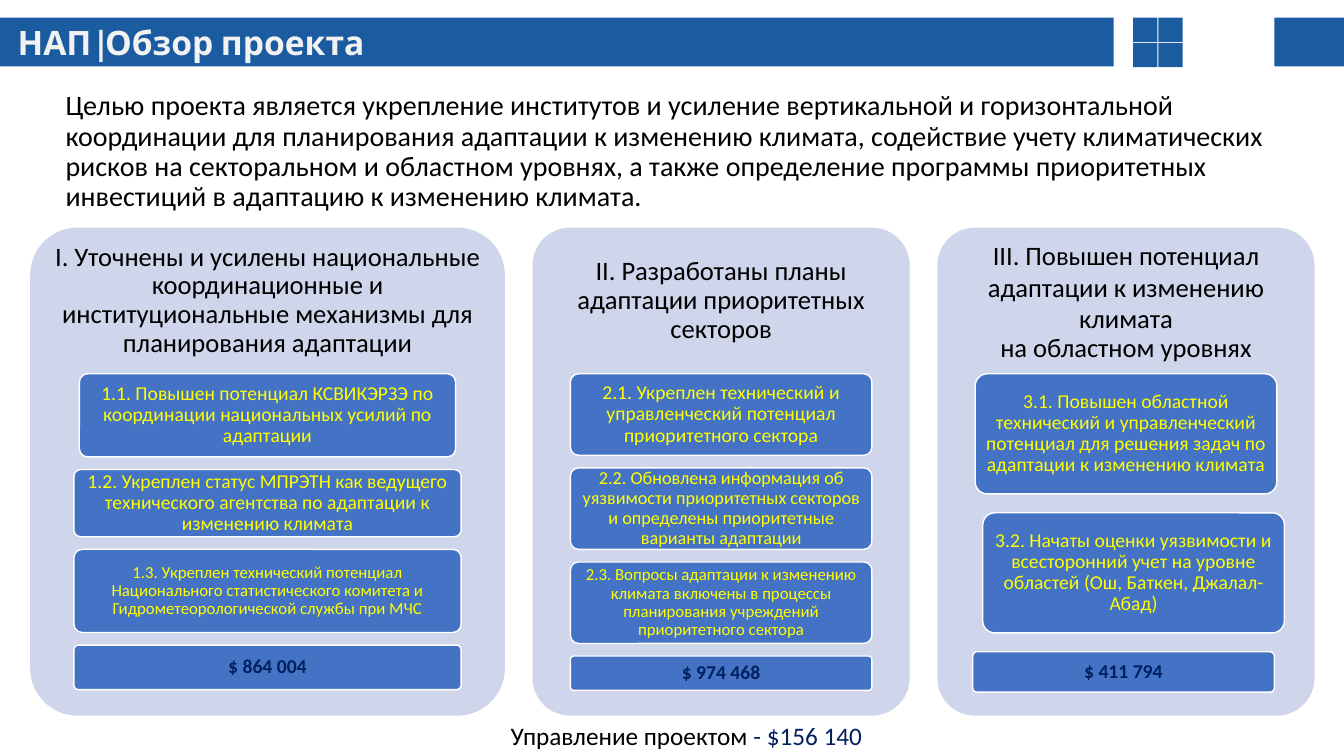
from dataclasses import dataclass

from pptx import Presentation
from pptx.dml.color import RGBColor
from pptx.enum.shapes import MSO_SHAPE
from pptx.enum.text import MSO_ANCHOR, MSO_AUTO_SIZE, PP_ALIGN
from pptx.util import Emu, Inches, Pt

RECT, ROUND = MSO_SHAPE.RECTANGLE, MSO_SHAPE.ROUNDED_RECTANGLE
LEFT, CENTER = PP_ALIGN.LEFT, PP_ALIGN.CENTER
MIDDLE, TOP = MSO_ANCHOR.MIDDLE, MSO_ANCHOR.TOP
TITLE_ONLY = 5

BRAND = RGBColor(0x1B, 0x5B, 0xA0)
PANEL_FILL = RGBColor(0xCF, 0xD5, 0xEA)
CARD_FILL = RGBColor(0x44, 0x72, 0xC4)
NAVY = RGBColor(0x00, 0x20, 0x60)
YELLOW = RGBColor(0xFF, 0xFF, 0x00)
BLACK = RGBColor(0x00, 0x00, 0x00)
WHITE = RGBColor(0xFF, 0xFF, 0xFF)
PALE = RGBColor(0xF2, 0xF2, 0xF2)

# The slide is a grid of square cells.
COLS, ROWS = 160, 90
WIDTH, HEIGHT = Inches(13.333), Inches(7.5)
PANEL_LEFT, PANEL_TOP, PANEL_ROWS, PANEL_GAP = 3.6, 27.1, 58.1, 3.3
HEADING_ROWS = 17.4
BAR_TOP, BAR_ROWS = 2.1, 5.8
TILE, TILE_STEP, TILES_LEFT = 2.9, 3, 134.9


@dataclass(frozen=True)
class Run:
    text: str
    size: float
    color: RGBColor = BLACK
    bold: bool = False
    font: str = "Calibri"


@dataclass(frozen=True)
class Para:
    runs: list[Run]
    align: PP_ALIGN = CENTER
    spacing: float = 0.9


@dataclass(frozen=True)
class Card:
    """One rounded card; shift moves it sideways from the panel's centre."""
    run: Run
    cols: float
    rows: float
    shift: float = 0


@dataclass(frozen=True)
class Panel:
    heading: list[Para]
    cols: float
    gap: float
    cards: list[Card]


def heading(text: str, spacing: float = 0.9) -> Para:
    return Para([Run(text, 19)], spacing=spacing)


def output(text: str, size: float = 14) -> Run:
    return Run(text, size, YELLOW)


def budget(text: str) -> Run:
    return Run(text, 14, NAVY, bold=True)


PANELS = [
    Panel([heading("I. Уточнены и усилены национальные координационные и "
                   "институциональные механизмы для планирования адаптации")], 56.5, 1.5, [
        Card(output("1.1. Повышен потенциал КСВИКЭРЗЭ по координации национальных "
                    "усилий по адаптации"), 44.8, 9.9),
        Card(output("1.2. Укреплен статус МПРЭТН как ведущего технического агентства "
                    "по адаптации к изменению климата"), 46.1, 8),
        Card(output("1.3. Укреплен технический потенциал Национального статистического "
                    "комитета и Гидрометеорологической службы при МЧС", 12), 46.1, 9.9),
        Card(budget("$ 864 004"), 46.1, 5.3),
    ]),
    Panel([heading("II. Разработаны планы адаптации приоритетных секторов")], 44.9, 1.5, [
        Card(output("2.1. Укреплен технический и управленческий потенциал "
                    "приоритетного сектора"), 35.9, 9.7),
        Card(output("2.2. Обновлена информация об уязвимости приоритетных секторов и "
                    "определены приоритетные варианты адаптации", 13), 35.9, 9.7),
        Card(output("2.3. Вопросы адаптации к изменению климата включены в процессы "
                    "планирования учреждений приоритетного сектора", 12), 35.9, 9.7),
        Card(budget("$ 974 468"), 35.9, 4.1),
    ]),
    Panel([heading("III. Повышен потенциал адаптации к изменению климата", 1.0),
           heading("на областном уровнях")], 44.9, 2.25, [
        Card(output("3.1. Повышен областной технический и управленческий потенциал для "
                    "решения задач по адаптации к изменению климата"), 35.9, 14.3),
        Card(output("3.2. Начаты оценки уязвимости и всесторонний учет на уровне "
                    "областей (Ош, Баткен, Джалал-Абад)"), 35.9, 14.3, shift=0.9),
        Card(budget("$ 411 794"), 35.9, 4.8, shift=-0.3),
    ]),
]
GOAL = ("Целью проекта является укрепление институтов и усиление вертикальной и "
        "горизонтальной координации для планирования адаптации к изменению климата, "
        "содействие учету климатических рисков на секторальном и областном уровнях, "
        "а также определение программы приоритетных инвестиций в адаптацию к "
        "изменению климата.")


def x(cols: float) -> Emu:
    return Emu(round(WIDTH * cols / COLS))


def y(rows: float) -> Emu:
    return Emu(round(HEIGHT * rows / ROWS))


def place(left: float, top: float, cols: float, rows: float) -> tuple[Emu, Emu, Emu, Emu]:
    return x(left), y(top), x(cols), y(rows)


def write(sp, paras: list[Para], inset: tuple[float, float] = (1.2, 0.6),
          anchor: MSO_ANCHOR = MIDDLE, wrap: bool = True) -> None:
    """Fill a shape with paragraphs; inset is side columns, then top and bottom rows."""
    tf = sp.text_frame
    side, end = x(inset[0]), y(inset[1])
    frame = dict(word_wrap=wrap, auto_size=MSO_AUTO_SIZE.NONE, vertical_anchor=anchor,
                 margin_left=side, margin_right=side, margin_top=end, margin_bottom=end)
    for name, value in frame.items():
        setattr(tf, name, value)
    for i, para in enumerate(paras):
        p = tf.add_paragraph() if i else tf.paragraphs[0]
        p.alignment, p.line_spacing = para.align, para.spacing
        for run in para.runs:
            r = p.add_run()
            r.text = run.text
            for name, value in dict(name=run.font, size=Pt(run.size), bold=run.bold).items():
                setattr(r.font, name, value)
            r.font.color.rgb = run.color


def add_block(s, kind: MSO_SHAPE, box: tuple[Emu, Emu, Emu, Emu], fill: RGBColor,
              line: RGBColor | None = None):
    sp = s.shapes.add_shape(kind, *box)
    sp.shadow.inherit = False
    sp.fill.solid()
    sp.fill.fore_color.rgb = fill
    if line is None:
        sp.line.fill.background()
    else:
        sp.line.color.rgb, sp.line.width = line, Pt(1)
    if kind == ROUND:
        sp.adjustments[0] = 0.1
    return sp


def draw_panel(s, panel: Panel, left: float) -> None:
    add_block(s, ROUND, place(left, PANEL_TOP, panel.cols, PANEL_ROWS), PANEL_FILL)
    box = s.shapes.add_textbox(*place(left, PANEL_TOP, panel.cols, HEADING_ROWS))
    write(box, panel.heading, (1, 1))
    top = PANEL_TOP + HEADING_ROWS
    for card in panel.cards:
        card_left = left + (panel.cols - card.cols) / 2 + card.shift
        sp = add_block(s, ROUND, place(card_left, top, card.cols, card.rows), CARD_FILL, WHITE)
        write(sp, [Para([card.run])], (0.45, 0.35))
        top += card.rows + panel.gap


def draw_header(s) -> None:
    bar = add_block(s, RECT, place(0, BAR_TOP, 132.6, BAR_ROWS), BRAND)
    words = [Run(text, size, PALE, True, "Cabin")
             for text, size in (("НАП", 24), (" ", 18), ("|Обзор проекта", 24))]
    write(bar, [Para(words, LEFT, 1.0)], (2.1, 0))
    add_block(s, RECT, place(151.7, BAR_TOP, COLS - 151.7, BAR_ROWS), BRAND)
    for row in range(2):
        for col in range(2):
            add_block(s, RECT, place(TILES_LEFT + col * TILE_STEP, BAR_TOP + row * TILE_STEP,
                                     TILE, TILE), BRAND)


def main() -> None:
    prs = Presentation()
    prs.slide_width, prs.slide_height = WIDTH, HEIGHT
    s = prs.slides.add_slide(prs.slide_layouts[TITLE_ONLY])

    title = s.shapes.title
    title.left, title.top, title.width, title.height = place(6.6, 10.6, 151.4, 15)
    write(title, [Para([Run(GOAL, 20)], LEFT)])

    left = PANEL_LEFT
    for panel in PANELS:
        draw_panel(s, panel, left)
        left += panel.cols + PANEL_GAP

    total = s.shapes.add_textbox(*place(59.6, 85.2, 44.8, 4.8))
    write(total, [Para([Run("Управление проектом ", 18), Run("- $156 140", 18, NAVY)],
                       LEFT, 1.0)], anchor=TOP, wrap=False)
    draw_header(s)
    prs.save("out.pptx")


if __name__ == "__main__":
    main()
